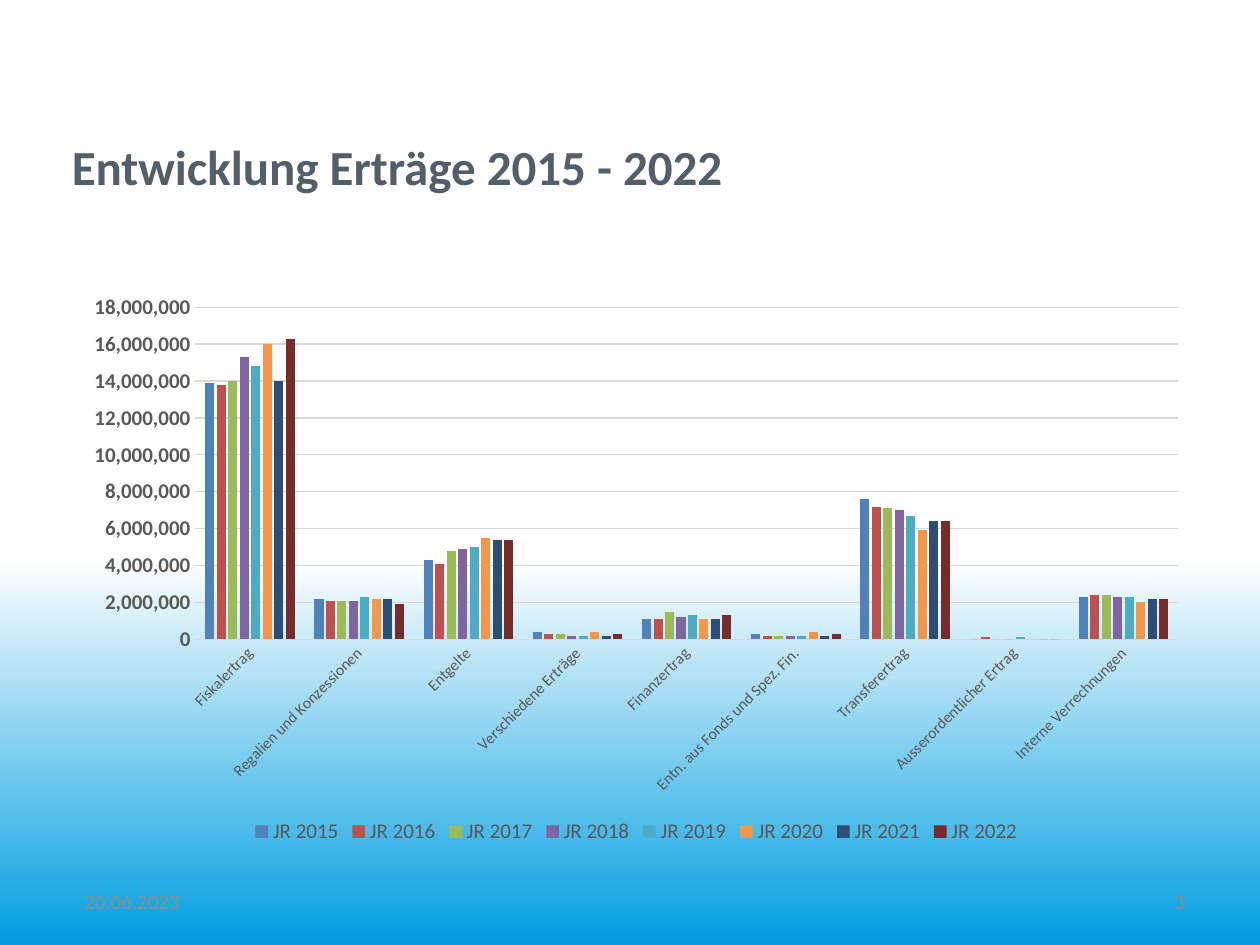
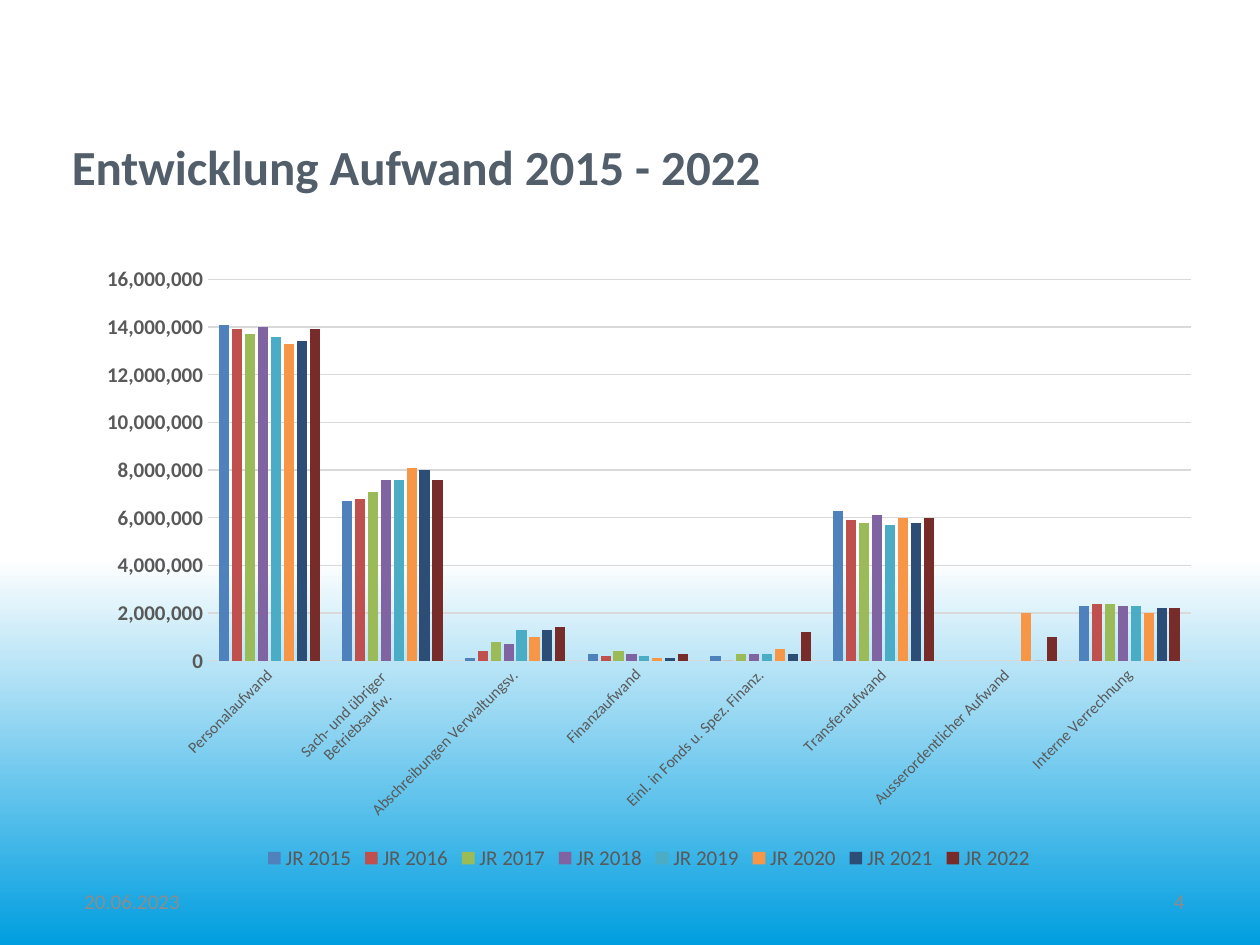
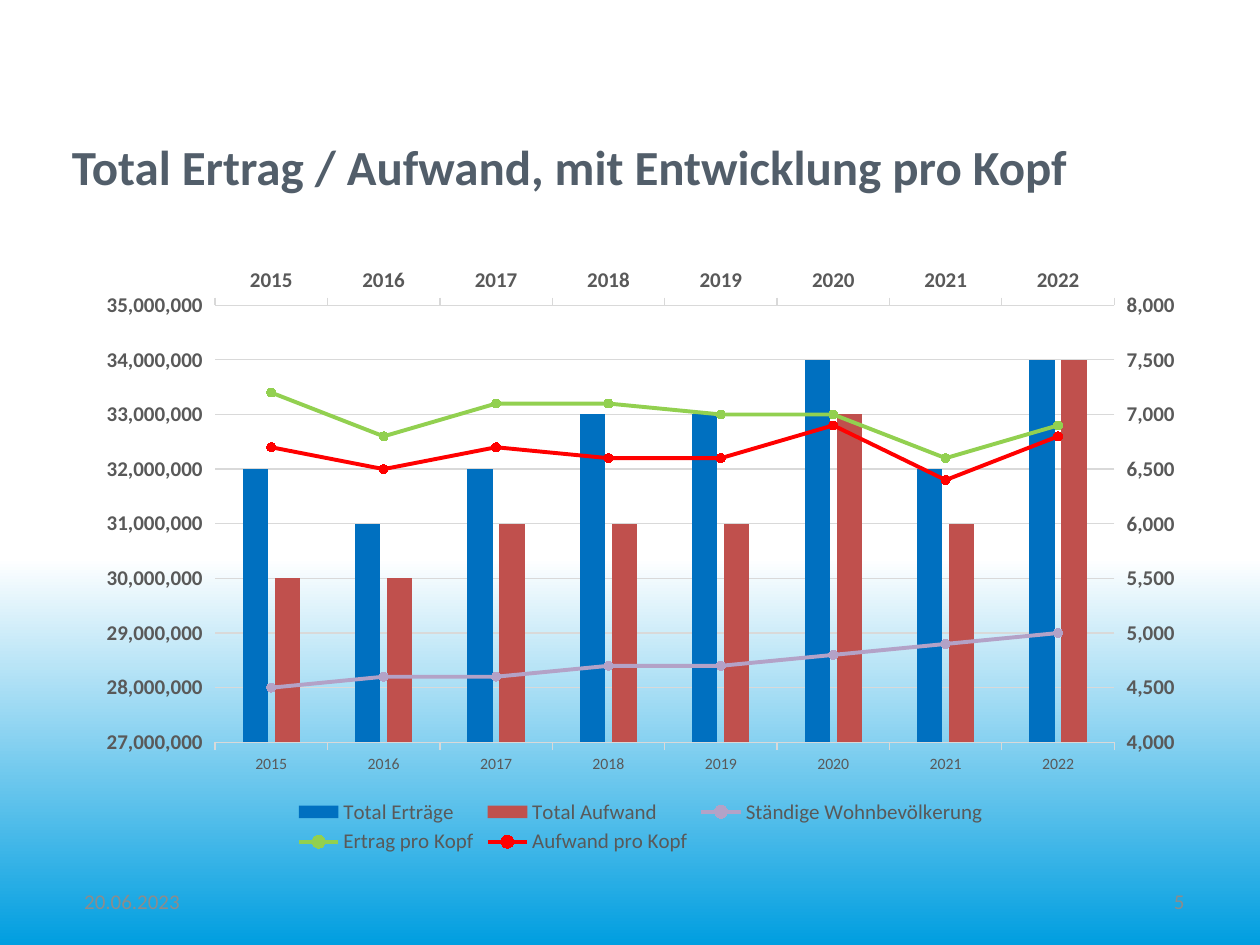
from copy import deepcopy

from pptx import Presentation
from pptx.chart.axis import CategoryAxis, ValueAxis
from pptx.chart.data import CategoryChartData
from pptx.dml.color import RGBColor
from pptx.enum.chart import (XL_CHART_TYPE, XL_LEGEND_POSITION, XL_MARKER_STYLE,
                             XL_TICK_LABEL_POSITION, XL_TICK_MARK)
from pptx.enum.text import MSO_ANCHOR, MSO_AUTO_SIZE, PP_ALIGN
from pptx.oxml import parse_xml
from pptx.oxml.ns import nsdecls, qn
from pptx.util import Emu, Pt

COLUMNS = XL_CHART_TYPE.COLUMN_CLUSTERED
BOTTOM = XL_LEGEND_POSITION.BOTTOM
CIRCLE = XL_MARKER_STYLE.CIRCLE
LABELS_HIGH = XL_TICK_LABEL_POSITION.HIGH
TICK_NONE, TICK_OUT = XL_TICK_MARK.NONE, XL_TICK_MARK.OUTSIDE
LEFT, RIGHT = PP_ALIGN.LEFT, PP_ALIGN.RIGHT
TOP, MIDDLE = MSO_ANCHOR.TOP, MSO_ANCHOR.MIDDLE

# Shared look
EMU_PER_PX = 9144  # 100 px to the inch
FONT = "Calibri"
WHITE, SKY = "FFFFFF", "009EE0"
TITLE_COLOR, FOOTER_COLOR = "525E6A", "8C8C8C"
LABEL_COLOR, GRID_COLOR = "595959", "D9D9D9"
YEARS = [str(year) for year in range(2015, 2023)]
YEAR_COLORS = ["4F81BD", "C0504D", "9BBB59", "8064A2",
               "4BACC6", "F79646", "2C4D75", "772C2A"]
DATE = "20.06.2023"

# Amounts in units of 100,000, one row per category, one column per year
INCOME = {
    "Fiskalertrag": [139, 138, 140, 153, 148, 160, 140, 163],
    "Regalien und Konzessionen": [22, 21, 21, 21, 23, 22, 22, 19],
    "Entgelte": [43, 41, 48, 49, 50, 55, 54, 54],
    "Verschiedene Erträge": [4, 3, 3, 2, 2, 4, 2, 3],
    "Finanzertrag": [11, 11, 15, 12, 13, 11, 11, 13],
    "Entn. aus Fonds und Spez. Fin.": [3, 2, 2, 2, 2, 4, 2, 3],
    "Transferertrag": [76, 72, 71, 70, 67, 59, 64, 64],
    "Ausserordentlicher Ertrag": [0, 1, 0, 0, 1, 0, 0, 0],
    "Interne Verrechnungen": [23, 24, 24, 23, 23, 20, 22, 22],
}
EXPENSES = {
    "Personalaufwand": [141, 139, 137, 140, 136, 133, 134, 139],
    "Sach- und übriger \nBetriebsaufw.": [67, 68, 71, 76, 76, 81, 80, 76],
    "Abschreibungen Verwaltungsv.": [1, 4, 8, 7, 13, 10, 13, 14],
    "Finanzaufwand": [3, 2, 4, 3, 2, 1, 1, 3],
    "Einl. in Fonds u. Spez. Finanz.": [2, 0, 3, 3, 3, 5, 3, 12],
    "Transferaufwand": [63, 59, 58, 61, 57, 60, 58, 60],
    "Ausserordentlicher Aufwand": [None, None, None, None, None, 20, 0, 10],
    "Interne Verrechnung": [23, 24, 24, 23, 23, 20, 22, 22],
}

# Totals in millions; population and per-head amounts in hundreds
TOTALS = [
    ("Total Erträge", "0070C0", [32, 31, 32, 33, 33, 34, 32, 34]),
    ("Total Aufwand", "C0504D", [30, 30, 31, 31, 31, 33, 31, 34]),
]
PER_HEAD = [
    ("Ständige Wohnbevölkerung", "B3A2C7", [45, 46, 46, 47, 47, 48, 49, 50]),
    ("Ertrag pro Kopf", "92D050", [72, 68, 71, 71, 70, 70, 66, 69]),
    ("Aufwand pro Kopf", "FF0000", [67, 65, 67, 66, 66, 69, 64, 68]),
]


def px(n):
    return Emu(n * EMU_PER_PX)


def rgb(color):
    return RGBColor.from_string(color)


def style_font(font, size, color, bold=False):
    font.name, font.size, font.bold = FONT, Pt(size), bold
    font.color.rgb = rgb(color)


def scaled(values, unit):
    return [None if v is None else v * unit for v in values]


def set_background(master):
    fill = master.background.fill
    fill.gradient()
    fill.gradient_angle = 270
    for stop, position, color in zip(fill.gradient_stops, (0.59, 1), (WHITE, SKY)):
        stop.position = position
        stop.color.rgb = rgb(color)


def place(sp, left, top, width, height):
    sp.left, sp.top, sp.width, sp.height = map(px, (left, top, width, height))


def write(sp, text, size, color, bold=False, align=LEFT, anchor=MIDDLE):
    tf = sp.text_frame
    tf.text = text
    tf.word_wrap = True
    tf.auto_size = MSO_AUTO_SIZE.NONE
    tf.vertical_anchor = anchor
    p = tf.paragraphs[0]
    p.alignment = align
    style_font(p.runs[0].font, size, color, bold)


def add_footer(s, left, text, align):
    sp = s.shapes.add_textbox(px(left), px(695), px(233), px(40))
    write(sp, text, 12, FOOTER_COLOR, align=align)


def add_slide(prs, title, number):
    s = prs.slides.add_slide(prs.slide_layouts[5])
    sp = s.shapes.title
    place(sp, 57, 108, 896, 62)
    write(sp, title, 28, TITLE_COLOR, bold=True, anchor=TOP)
    tf = sp.text_frame
    tf.margin_left = tf.margin_top = tf.margin_right = tf.margin_bottom = 0
    add_footer(s, 57, DATE, LEFT)
    add_footer(s, 717, str(number), RIGHT)
    return s


def style_axes(chart, low, high, step, tick):
    cat, val = chart.category_axis, chart.value_axis
    for axis in (cat, val):
        axis.major_tick_mark = tick
        axis.minor_tick_mark = TICK_NONE
    style_font(cat.tick_labels.font, 9, LABEL_COLOR)
    style_font(val.tick_labels.font, 12, LABEL_COLOR, bold=True)
    val.tick_labels.number_format = "#,##0"
    val.tick_labels.number_format_is_linked = False
    val.minimum_scale, val.maximum_scale, val.major_unit = low, high, step
    val.format.line.fill.background()
    for line in (cat.format.line, val.major_gridlines.format.line):
        line.color.rgb = rgb(GRID_COLOR)
        line.width = Pt(0.75)


def add_column_chart(s, box, cats, series, scale, tick=TICK_NONE):
    """Series are (name, color, values); scale is (low, high, step)."""
    data = CategoryChartData(number_format="#,##0")
    data.categories = cats
    for name, _, values in series:
        data.add_series(name, values)
    chart = s.shapes.add_chart(COLUMNS, *map(px, box), data).chart
    chart.has_title = False
    style_font(chart.font, 10, "000000")
    chart.has_legend = True
    chart.legend.position = BOTTOM
    chart.legend.include_in_layout = False
    style_font(chart.legend.font, 12, LABEL_COLOR)
    plot = chart.plots[0]
    plot.gap_width, plot.overlap, plot.vary_by_categories = 219, -27, False
    for ser, (_, color, _) in zip(plot.series, series):
        ser.format.fill.solid()
        ser.format.fill.fore_color.rgb = rgb(color)
    style_axes(chart, *scale, tick)
    return chart


def add_year_chart(s, box, table, high):
    columns = zip(*table.values())
    series = [(f"JR {year}", color, scaled(values, 100000))
              for year, color, values in zip(YEARS, YEAR_COLORS, columns)]
    chart = add_column_chart(s, box, list(table), series, (0, high, 2000000))
    # Slanted category labels
    body = chart.category_axis._element.xpath("c:txPr/a:bodyPr")[0]
    body.set("rot", "-2700000")
    body.set("vert", "horz")


def cross_at_max(axis):
    for tag in ("c:crosses", "c:crossesAt"):
        for child in axis.findall(qn(tag)):
            axis.remove(child)
    crosses = parse_xml(f"<c:crosses {nsdecls('c')} val='max'/>")
    axis.find(qn("c:crossAx")).addnext(crosses)


def add_second_axes(chart, low, high, step):
    """Copy both axes to the top and right edges; return their ids."""
    ids = ["50010", "50020"]
    last = chart.value_axis._element
    new_axes = [deepcopy(axis._element)
                for axis in (chart.category_axis, chart.value_axis)]
    for axis, own, other, side in zip(new_axes, ids, reversed(ids), "tr"):
        axis.find(qn("c:axId")).set("val", own)
        axis.find(qn("c:crossAx")).set("val", other)
        axis.find(qn("c:axPos")).set("val", side)
        cross_at_max(axis)
        last.addnext(axis)
    top, right = CategoryAxis(new_axes[0]), ValueAxis(new_axes[1])
    style_font(top.tick_labels.font, 12, LABEL_COLOR, bold=True)
    right.has_major_gridlines = False
    right.tick_label_position = LABELS_HIGH
    right.minimum_scale, right.maximum_scale, right.major_unit = low, high, step
    return ids


def move_to_lines(chart, series, ids):
    """Turn the last columns into lines that use the axes with these ids."""
    bars = chart._chartSpace.xpath("c:chart/c:plotArea/c:barChart")[0]
    lines = parse_xml(
        f"<c:lineChart {nsdecls('c')}><c:grouping val='standard'/>"
        "<c:varyColors val='0'/><c:marker val='1'/>"
        f"<c:axId val='{ids[0]}'/><c:axId val='{ids[1]}'/></c:lineChart>")
    marker = lines.find(qn("c:marker"))
    for ser in bars.findall(qn("c:ser"))[-len(series):]:
        for tag in ("c:invertIfNegative", "c:spPr"):
            for child in ser.findall(qn(tag)):
                ser.remove(child)
        marker.addprevious(ser)
    bars.addnext(lines)
    for ser, (_, color, _) in zip(chart.plots[1].series, series):
        ser.smooth = False
        ser.format.line.color.rgb = rgb(color)
        ser.format.line.width = Pt(2.25)
        ser.marker.style, ser.marker.size = CIRCLE, 5
        fmt = ser.marker.format
        fmt.fill.solid()
        fmt.fill.fore_color.rgb = rgb(color)
        fmt.line.color.rgb = rgb(color)


def add_combined_chart(s, box):
    series = [(name, color, scaled(values, unit))
              for group, unit in ((TOTALS, 1000000), (PER_HEAD, 100))
              for name, color, values in group]
    chart = add_column_chart(s, box, YEARS, series,
                             (27000000, 35000000, 1000000), TICK_OUT)
    ids = add_second_axes(chart, 4000, 8000, 500)
    move_to_lines(chart, PER_HEAD, ids)


def main():
    prs = Presentation()
    prs.slide_width, prs.slide_height = px(1000), px(750)
    set_background(prs.slide_master)

    # Income by type
    s = add_slide(prs, "Entwicklung Erträge 2015 - 2022", 3)
    add_year_chart(s, (57, 225, 896, 449), INCOME, 18000000)

    # Expenses by type
    s = add_slide(prs, "Entwicklung Aufwand 2015 - 2022", 4)
    add_year_chart(s, (67, 202, 896, 493), EXPENSES, 16000000)

    # Totals with amounts per head
    s = add_slide(prs, "Total Ertrag / Aufwand, mit Entwicklung pro Kopf", 5)
    add_combined_chart(s, (67, 203, 883, 479))

    prs.save("out.pptx")


if __name__ == "__main__":
    main()
